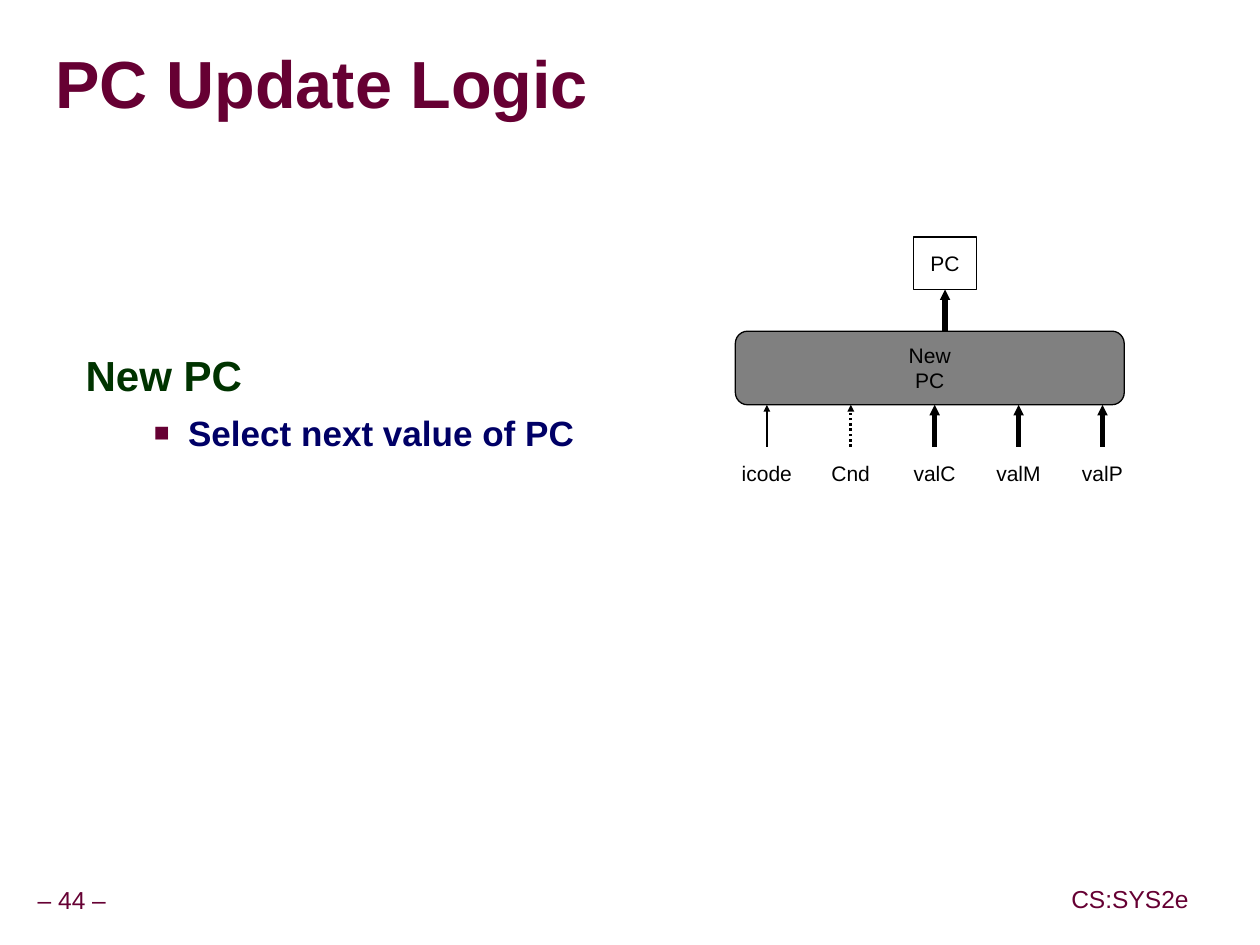
import dataclasses

import lxml.etree
import pptx
import pptx.dml.color
import pptx.enum.dml
import pptx.enum.shapes
import pptx.enum.text
import pptx.oxml.ns
import pptx.util

Pt = pptx.util.Pt
Shape = pptx.enum.shapes.MSO_SHAPE
Align = pptx.enum.text.PP_ALIGN
Anchor = pptx.enum.text.MSO_ANCHOR
Dash = pptx.enum.dml.MSO_LINE


@dataclasses.dataclass(frozen=True)
class Theme:
    font: str = "Arial"
    maroon: str = "660033"
    green: str = "003300"
    navy: str = "000066"
    black: str = "000000"
    white: str = "FFFFFF"
    logic_gray: str = "808080"
    title_size: float = 38
    heading_size: float = 24
    bullet_size: float = 20
    footer_size: float = 14
    label_size: float = 12


THEME = Theme()


def rgb(color):
    return pptx.dml.color.RGBColor.from_string(color)


def add_element(parent, tag, **attributes):
    element = lxml.etree.SubElement(parent, pptx.oxml.ns.qn(tag))
    for name, value in attributes.items():
        element.set(name, value)
    return element


def add_run(paragraph, text, size, color, bold=False):
    run = paragraph.add_run()
    run.text = text
    run.font.name = THEME.font
    run.font.size = Pt(size)
    run.font.bold = bold
    run.font.color.rgb = rgb(color)
    return run


def set_frame(frame, inset_x, inset_y, wrap, anchor=Anchor.MIDDLE):
    frame.margin_left = frame.margin_right = Pt(inset_x)
    frame.margin_top = frame.margin_bottom = Pt(inset_y)
    frame.word_wrap = wrap
    frame.vertical_anchor = anchor


def add_text_box(slide, left, top, width, height):
    box = slide.shapes.add_textbox(Pt(left), Pt(top), Pt(width), Pt(height))
    return box.text_frame


def add_title(slide, text):
    frame = add_text_box(slide, 31.7, 19.4, 685.4, 61.2)
    set_frame(frame, 0, 0, True)
    paragraph = frame.paragraphs[0]
    paragraph.line_spacing = 0.87
    run = add_run(paragraph, text, THEME.title_size, THEME.maroon, bold=True)
    properties = run.font._element
    effects = lxml.etree.Element(pptx.oxml.ns.qn("a:effectLst"))
    shadow = add_element(effects, "a:outerShdw", dist="38100", dir="2700000")
    add_element(shadow, "a:srgbClr", val=THEME.logic_gray)
    properties.find(pptx.oxml.ns.qn("a:solidFill")).addnext(effects)


def set_bullet(paragraph, margin, hanging):
    properties = paragraph._p.get_or_add_pPr()
    properties.set("marL", str(Pt(margin)))
    properties.set("indent", str(-Pt(hanging)))
    color = add_element(properties, "a:buClr")
    add_element(color, "a:srgbClr", val=THEME.maroon)
    add_element(properties, "a:buSzPct", val="75000")
    add_element(properties, "a:buFont", typeface=THEME.font)
    add_element(properties, "a:buChar", char="■")


def add_body(slide, heading, bullet):
    frame = add_text_box(slide, 41.8, 198, 419.8, 198)
    set_frame(frame, 7.2, 3.6, True, Anchor.TOP)
    paragraph = frame.paragraphs[0]
    paragraph.line_spacing = 0.95
    add_run(paragraph, heading, THEME.heading_size, THEME.green, bold=True)
    paragraph = frame.add_paragraph()
    paragraph.space_before = Pt(6)
    set_bullet(paragraph, 58.5, 19.5)
    add_run(paragraph, bullet, THEME.bullet_size, THEME.navy, bold=True)


def add_footer(slide, text, left, top, width):
    frame = add_text_box(slide, left, top, width, 22.3)
    set_frame(frame, 3.6, 3.6, False)
    paragraph = frame.paragraphs[0]
    paragraph.alignment = Align.CENTER
    paragraph.line_spacing = 0.9
    add_run(paragraph, text, THEME.footer_size, THEME.maroon)


def add_block(slide, kind, lines, left, top, width, height, fill=None):
    """Add a labelled diagram block; without a fill only its label shows."""
    shape = slide.shapes.add_shape(kind, Pt(left), Pt(top), Pt(width), Pt(height))
    shape.shadow.inherit = False
    if fill:
        shape.fill.solid()
        shape.fill.fore_color.rgb = rgb(fill)
        shape.line.color.rgb = rgb(THEME.black)
        shape.line.width = Pt(0.75)
    else:
        shape.fill.background()
        shape.line.fill.background()
    frame = shape.text_frame
    set_frame(frame, 7.2, 3.6, False)
    for index, line in enumerate(lines):
        paragraph = frame.add_paragraph() if index else frame.paragraphs[0]
        paragraph.alignment = Align.CENTER
        add_run(paragraph, line, THEME.label_size, THEME.black)


def add_up_arrow(slide, x, bottom, top, width, dash=None):
    arrow = slide.shapes.add_connector(
        pptx.enum.shapes.MSO_CONNECTOR.STRAIGHT, Pt(x), Pt(bottom), Pt(x), Pt(top))
    arrow.line.color.rgb = rgb(THEME.black)
    arrow.line.width = Pt(width)
    if dash:
        arrow.line.dash_style = dash
    add_element(arrow.line._get_or_add_ln(), "a:tailEnd",
                type="triangle", w="sm", len="sm")
    add_element(arrow._element.spPr, "a:effectLst")


def add_diagram(slide):
    left, pitch, block_width, block_height = 419.8, 47.9, 36, 30
    logic_top, logic_bottom, input_top = 189, 231, 255
    register_left, register_top = 521.5, 135.2

    add_block(slide, Shape.ROUNDED_RECTANGLE, ["New", "PC"], left, logic_top,
              222, logic_bottom - logic_top, THEME.logic_gray)
    inputs = [("icode", 1, None), ("Cnd", 1.5, Dash.ROUND_DOT),
              ("valC", 3, None), ("valM", 3, None), ("valP", 3, None)]
    for column, (label, width, dash) in enumerate(inputs):
        input_left = left + column * pitch
        add_block(slide, Shape.OVAL, [label], input_left, input_top,
                  block_width, block_height)
        add_up_arrow(slide, input_left + block_width / 2, input_top,
                     logic_bottom, width, dash)
    add_up_arrow(slide, register_left + block_width / 2, logic_top,
                 register_top + block_height, 3)
    add_block(slide, Shape.RECTANGLE, ["PC"], register_left, register_top,
              block_width, block_height, THEME.white)


def main():
    presentation = pptx.Presentation()
    presentation.slide_width = Pt(719.3)
    presentation.slide_height = Pt(539.3)
    slide = presentation.slides.add_slide(presentation.slide_layouts[6])
    slide.background.fill.solid()
    slide.background.fill.fore_color.rgb = rgb(THEME.white)
    add_footer(slide, "– 44 –", 17.3, 503.3, 47.5)
    add_footer(slide, "CS:SYS2e", 607.7, 502.6, 74.9)
    add_title(slide, "PC Update Logic")
    add_body(slide, "New PC", "Select next value of PC")
    add_diagram(slide)
    presentation.save("out.pptx")


if __name__ == "__main__":
    main()
